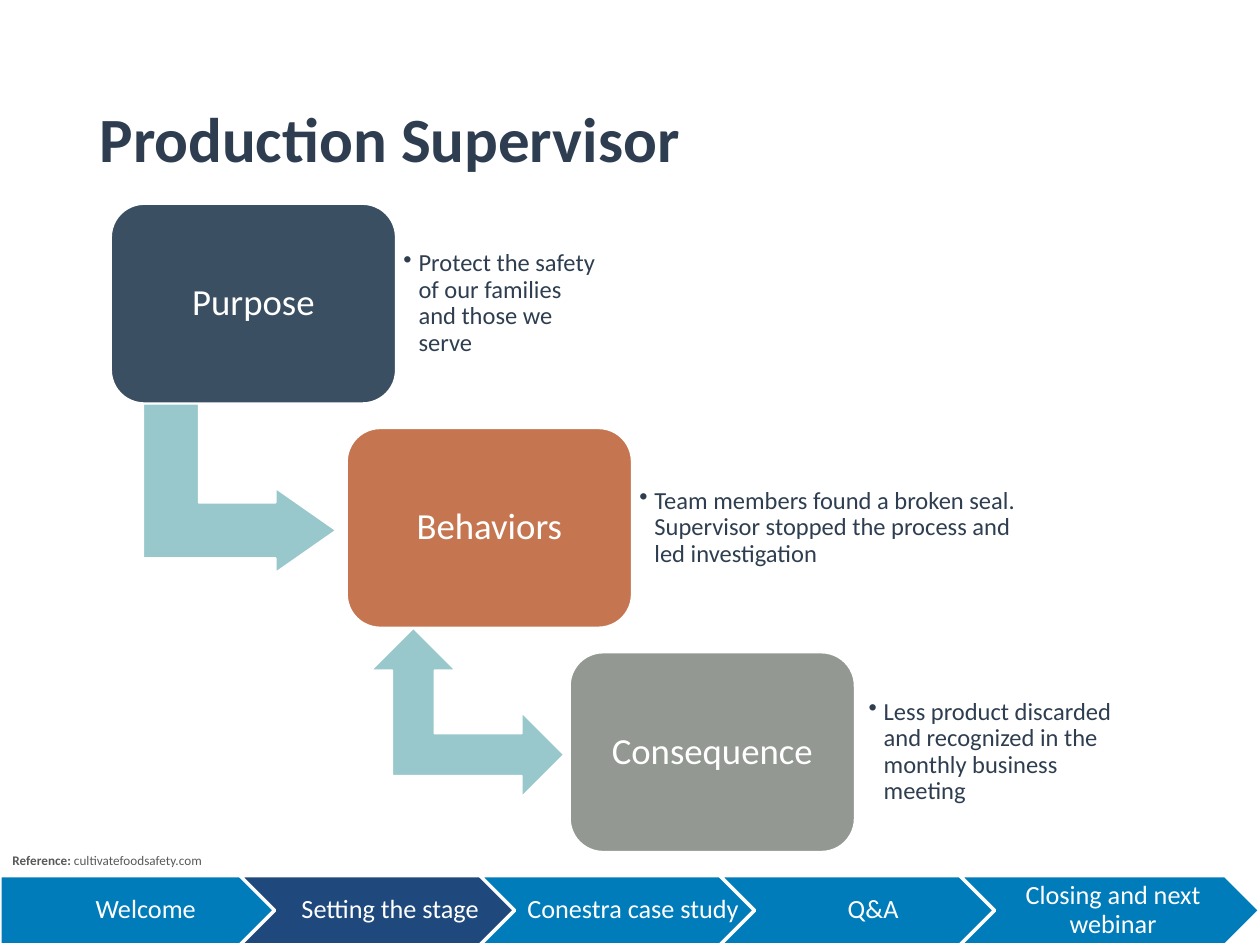
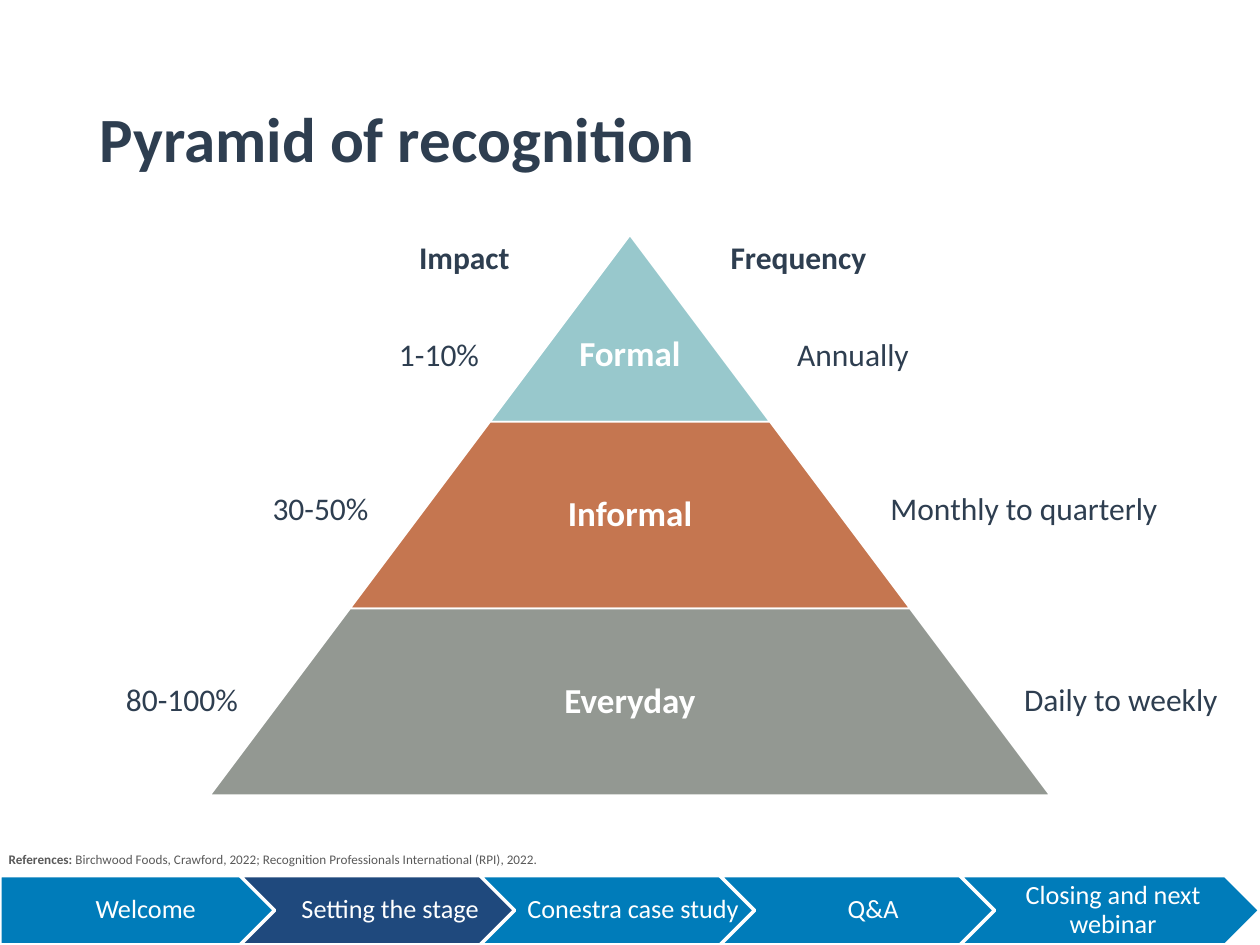
from collections import namedtuple
from dataclasses import dataclass

from lxml import etree
from pptx import Presentation
from pptx import util as u
from pptx.dml.color import RGBColor
from pptx.enum import shapes, text
from pptx.oxml.ns import qn

Box = namedtuple("Box", "left top width height")
Kind = shapes.MSO_SHAPE
Align = text.PP_ALIGN
Anchor = text.MSO_ANCHOR


@dataclass(frozen=True)
class Theme:
    font: str = "Calibri"
    ink: str = "2E3E50"
    white: str = "FFFFFF"
    navy: str = "3B4F62"
    rust: str = "C57650"
    sage: str = "939892"
    aqua: str = "98C8CC"
    step: str = "007CBA"
    current_step: str = "1F497D"
    note: str = "595959"
    title_size: float = 36
    card_size: float = 21
    tier_size: float = 20
    label_size: float = 18
    step_size: float = 15
    bullet_size: float = 14
    note_size: float = 7.5


THEME = Theme()
SLIDE = Box(0, 0, 720, 540)
TITLE = Box(49.7, 28.8, 620.6, 104.4)
AGENDA = Box(0, 500.4, 720, 39.6)
AGENDA_STEPS = ["Welcome", "Setting the stage ", "Conestra case study", "Q&A",
                "Closing and next webinar"]
CURRENT = 1


def points(values):
    return [u.Pt(value) for value in values]


def write(frame, content, lead="", size=THEME.label_size, color=THEME.ink, bold=False,
          align=Align.LEFT, anchor=Anchor.TOP, spacing=None,
          insets=(7.2, 3.6, 7.2, 3.6), bullet_indent=0):
    frame.word_wrap = True
    frame.auto_size = text.MSO_AUTO_SIZE.NONE
    frame.vertical_anchor = anchor
    (frame.margin_left, frame.margin_top,
     frame.margin_right, frame.margin_bottom) = points(insets)
    para = frame.paragraphs[0]
    para.alignment = align
    if bullet_indent:
        properties = para._p.get_or_add_pPr()
        properties.set("marL", str(u.Pt(bullet_indent)))
        properties.set("indent", str(-u.Pt(bullet_indent)))
        etree.SubElement(properties, qn("a:buChar")).set("char", "•")
    if spacing:
        para.line_spacing = spacing
    for words, heavy in ((lead, True), (content, bold)):
        if words:
            span = para.add_run()
            span.text = words
            span.font.name = THEME.font
            span.font.size = u.Pt(size)
            span.font.bold = heavy
            span.font.color.rgb = RGBColor.from_string(color)


def add_text(page, box, content, **style):
    write(page.shapes.add_textbox(*points(box)).text_frame, content, **style)


def add_block(page, kind, box, fill, line_width=1, adjustments=(), rotation=0):
    block = page.shapes.add_shape(kind, *points(box))
    block.shadow.inherit = False
    block.fill.solid()
    block.fill.fore_color.rgb = RGBColor.from_string(fill)
    block.line.color.rgb = RGBColor.from_string(THEME.white)
    block.line.width = u.Pt(line_width)
    block.rotation = rotation
    for index, value in enumerate(adjustments):
        block.adjustments[index] = value
    return block


def draw_agenda(page, box):
    overlap = 34.3
    pitch = (box.width - overlap) / len(AGENDA_STEPS)
    for index, label in enumerate(AGENDA_STEPS):
        step = add_block(
            page, Kind.CHEVRON if index else Kind.PENTAGON,
            Box(box.left + index * pitch, box.top, pitch + overlap, box.height),
            THEME.current_step if index == CURRENT else THEME.step, line_width=2)
        write(step.text_frame, label, size=THEME.step_size, color=THEME.white,
              align=Align.CENTER, anchor=Anchor.MIDDLE, spacing=0.9,
              insets=(5 if index else 6.5, 2.9, 1.4, 2.9))


def start_page(deck, title, lead, reference, reference_box):
    page = deck.slides.add_slide(deck.slide_layouts[5])
    heading = page.shapes.title
    heading.left, heading.top, heading.width, heading.height = points(TITLE)
    write(heading.text_frame, title, size=THEME.title_size, bold=True,
          anchor=Anchor.MIDDLE, spacing=0.9)
    add_text(page, reference_box, reference, lead=lead,
             size=THEME.note_size, color=THEME.note)
    draw_agenda(page, AGENDA)
    return page


def draw_staircase(page, box):
    card_width, card_height = 162.7, 113.8
    drop = (box.height - card_height) / 2
    cards = [
        ("Purpose", THEME.navy, 0, 0, 118.8,
         "Protect the safety of our families and those we serve"),
        ("Behaviors", THEME.rust, 134.8, 0, 226.8,
         "Team members found a broken seal. Supervisor stopped the process "
         "and led investigation"),
        ("Consequence", THEME.sage, 262.2, 3.6, 154.8,
         "Less product discarded and recognized in the monthly business meeting"),
    ]
    arrows = [(Kind.BENT_UP_ARROW, 25.2, (0.328, 0.25, 0.358)),
              (Kind.LEFT_UP_ARROW, 20.6, ())]
    for index, (name, fill, shift, gap, detail_width, detail) in enumerate(cards):
        left, top = box.left + shift, box.top + index * drop
        if index < len(arrows):
            kind, offset, adjustments = arrows[index]
            add_block(page, kind, Box(left + offset, top + 107.3, 96.5, 110.2),
                      THEME.aqua, adjustments=adjustments, rotation=90)
        card = add_block(page, Kind.ROUNDED_RECTANGLE,
                         Box(left, top, card_width, card_height), fill)
        write(card.text_frame, name, size=THEME.card_size, color=THEME.white,
              align=Align.CENTER, anchor=Anchor.MIDDLE, spacing=0.9, insets=(6.5,) * 4)
        add_text(page, Box(left + card_width + gap, top + 10.8, detail_width, 92.2),
                 detail, size=THEME.bullet_size, anchor=Anchor.MIDDLE, spacing=0.9,
                 insets=(4.3,) * 4, bullet_indent=8.64)


def draw_pyramid(page, box):
    tiers = [("Formal", THEME.aqua), ("Informal", THEME.rust), ("Everyday", THEME.sage)]
    height = box.height / len(tiers)
    slope = box.width / 2 / box.height
    center = box.left + box.width / 2
    for index, (name, fill) in enumerate(tiers):
        width = box.width * (index + 1) / len(tiers)
        tier = Box(center - width / 2, box.top + index * height, width, height)
        add_block(page, Kind.TRAPEZOID, tier, fill, adjustments=(slope,))
        add_text(page, tier, name, size=THEME.tier_size, color=THEME.white, bold=True,
                 align=Align.CENTER, anchor=Anchor.MIDDLE, spacing=0.9,
                 insets=(2, 2 if index else 33, 2, 2))


def draw_tier_labels(page, box):
    rows = [
        (0, "Impact ", 83.5, "Frequency", 290.2, True),
        (55.4, "1-10%", 67, "Annually", 328.3, False),
        (143.3, "30-50%", -0.7, "Monthly to quarterly", 381.6, False),
        (252.7, "80-100%", -79.9, "Daily to weekly", 457.9, False),
    ]
    for down, impact, impact_left, frequency, frequency_left, bold in rows:
        top = box.top + down
        add_text(page, Box(box.left + impact_left, top, 127.4, 28.8), impact,
                 bold=bold, align=Align.CENTER)
        left = box.left + frequency_left
        add_text(page, Box(left, top, min(198.7, SLIDE.width - left), 28.8),
                 frequency, bold=bold)


def main():
    deck = Presentation()
    deck.slide_width, deck.slide_height = points(SLIDE[2:])

    page = start_page(deck, "Production Supervisor", "Reference: ",
                      "cultivatefoodsafety.com", Box(0, 483.8, 497.5, 16.6))
    draw_staircase(page, Box(63.5, 116.6, 583, 370.1))

    page = start_page(deck, "Pyramid of recognition", "References: ",
                      "Birchwood Foods, Crawford, 2022; Recognition Professionals "
                      "International (RPI), 2022.", Box(-2.2, 483.1, 497.5, 16.6))
    draw_pyramid(page, Box(120, 134.4, 480, 320))
    draw_tier_labels(page, Box(120.2, 132.5, 480, 320))

    deck.save("out.pptx")


if __name__ == "__main__":
    main()
